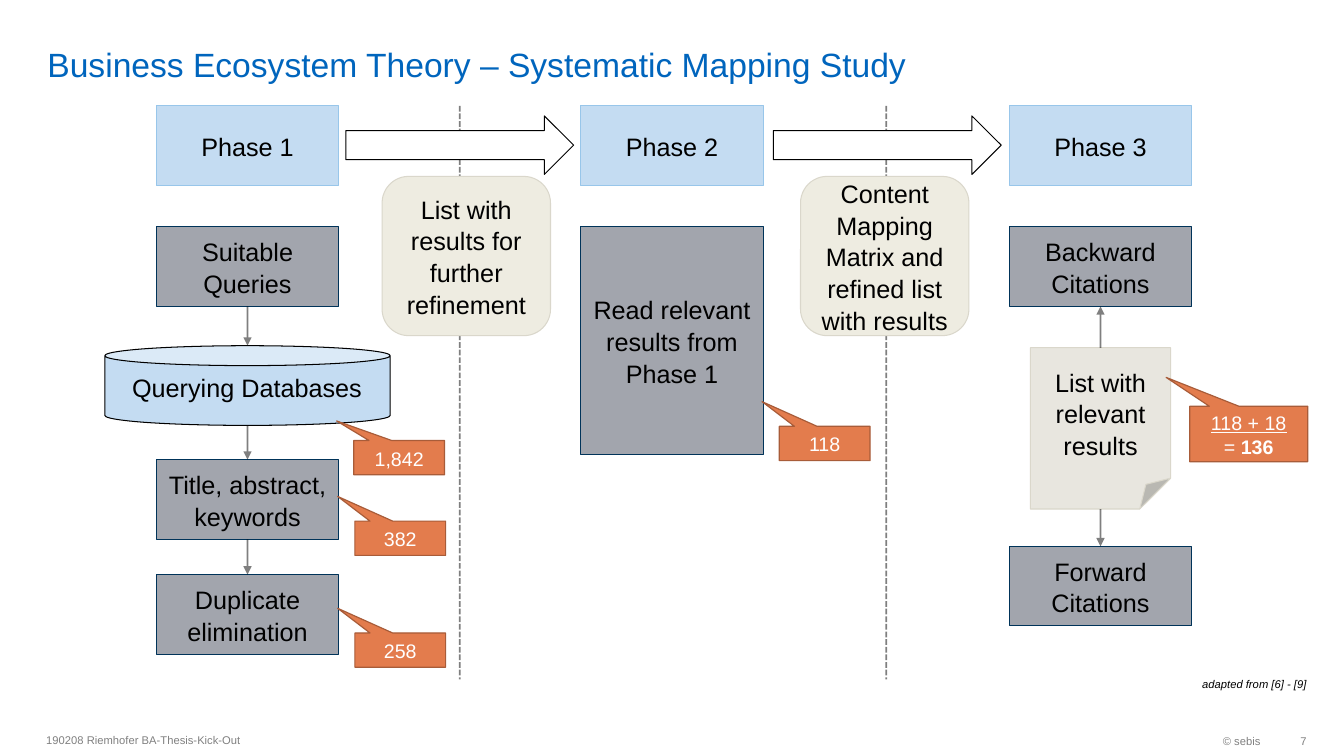
"""Builds the slide on the three phases of a systematic mapping study."""
from lxml import etree
from pptx import Presentation
from pptx.dml.color import RGBColor
from pptx.enum.dml import MSO_LINE
from pptx.enum.shapes import MSO_CONNECTOR, MSO_SHAPE
from pptx.enum.text import MSO_ANCHOR, PP_ALIGN
from pptx.oxml.ns import qn
from pptx.util import Inches, Pt

LEFT, CENTER, RIGHT = PP_ALIGN.LEFT, PP_ALIGN.CENTER, PP_ALIGN.RIGHT
TOP, MIDDLE, BOTTOM = MSO_ANCHOR.TOP, MSO_ANCHOR.MIDDLE, MSO_ANCHOR.BOTTOM
RECT, ROUNDED, CAN = MSO_SHAPE.RECTANGLE, MSO_SHAPE.ROUNDED_RECTANGLE, MSO_SHAPE.CAN
ARROW, NOTE = MSO_SHAPE.RIGHT_ARROW, MSO_SHAPE.FOLDED_CORNER
CALLOUT = MSO_SHAPE.RECTANGULAR_CALLOUT
STRAIGHT, DASHED = MSO_CONNECTOR.STRAIGHT, MSO_LINE.SQUARE_DOT

COLORS = {
    "title": "0065BD", "text": "000000", "footer": "808080", "white": "FFFFFF",
    "phase": "C4DCF2", "phase_edge": "98C6EA", "step": "A2A5AD", "step_edge": "003359",
    "result": "EEECE1", "note": "E8E6DF", "result_edge": "DAD7CB",
    "count": "E37C4D", "count_edge": "A85C39",
}

TITLE = "Business Ecosystem Theory – Systematic Mapping Study"
COLUMNS = [1.55, 5.76, 10.01]
PHASES = ["Phase 1", "Phase 2", "Phase 3"]
BOX_WIDTH, BOX_HEIGHT, PHASE_TOP, STEP_TOP = 1.81, 0.79, 1.05, 2.25
STEPS = [
    ("Suitable Queries", 0, STEP_TOP, BOX_HEIGHT),
    ("Title, abstract, keywords", 0, 4.56, BOX_HEIGHT),
    ("Duplicate elimination", 0, 5.7, BOX_HEIGHT),
    ("Read relevant results from Phase 1", 1, STEP_TOP, 2.26),
    ("Backward Citations", 2, STEP_TOP, BOX_HEIGHT),
    ("Forward Citations", 2, 5.42, BOX_HEIGHT),
]
DIVIDERS = [4.56, 8.79]
PHASE_ARROWS = [3.43, 7.67]
FLOWS = [(0, 3.04, 3.43), (0, 4.22, 4.56), (0, 5.35, 5.7), (2, 3.45, 3.04), (2, 5.05, 5.42)]
RESULTS = [
    ("List with results for further refinement", 3.79),
    ("Content Mapping Matrix and refined list with results", 7.94),
]
COUNTS = [
    ([[("1,842", {})]], (3.51, 4.37, 0.9, 0.34), (-0.69, -1.07)),
    ([[("382", {})]], (3.52, 5.17, 0.9, 0.34), (-0.69, -1.22)),
    ([[("258", {})]], (3.52, 6.28, 0.9, 0.34), (-0.69, -1.22)),
    ([[("118", {})]], (7.73, 4.23, 0.9, 0.34), (-0.69, -1.22)),
    ([[("118 + 18", {"underline": True})], [("= ", {}), ("136", {"bold": True})]],
     (11.8, 4.03, 1.17, 0.55), (-0.7, -1.02)),
]
SMALL_PRINT = [
    ("adapted from [6] - [9]", (0.36, 6.66, 12.6, 0.24), RIGHT, 0,
     {"color": "text", "italic": True, "anchor": TOP}),
    ("190208 Riemhofer BA-Thesis-Kick-Out", (0.36, 7.18, 6.3, 0.32), LEFT, 0.1, {"color": "footer"}),
    ("© sebis", (10.26, 7.19, 2.34, 0.32), RIGHT, 0.1, {"color": "footer"}),
    ("7", (12.6, 7.19, 0.36, 0.32), RIGHT, 0, {"color": "footer"}),
]


def rgb(name):
    return RGBColor.from_string(COLORS[name])


def write(frame, content, size=18, color="text", align=CENTER, anchor=MIDDLE,
          margins=(0.1, 0.05, 0.1, 0.05), spacing=1.05, italic=None):
    """Fills a text frame with a string or with paragraphs made of (text, style) runs."""
    frame.word_wrap = True
    frame.vertical_anchor = anchor
    frame.margin_left, frame.margin_top, frame.margin_right, frame.margin_bottom = map(Inches, margins)
    paragraphs = [[(content, {})]] if isinstance(content, str) else content
    for index, runs in enumerate(paragraphs):
        paragraph = frame.add_paragraph() if index else frame.paragraphs[0]
        paragraph.alignment, paragraph.line_spacing = align, spacing
        for text, style in runs:
            run = paragraph.add_run()
            run.text = text
            run.font.name, run.font.size = "Arial", Pt(size)
            run.font.color.rgb = rgb(color)
            run.font.italic = italic
            run.font.bold = style.get("bold")
            run.font.underline = style.get("underline")


def add_box(slide, kind, place, fill, edge, content=None, guides=None, edge_width=0.75, **text_format):
    box = slide.shapes.add_shape(kind, *map(Inches, place))
    box.shadow.inherit = False
    box.fill.solid()
    box.fill.fore_color.rgb = rgb(fill)
    box.line.color.rgb = rgb(edge)
    box.line.width = Pt(edge_width)
    if guides:
        guide_list = box._element.spPr.find(".//" + qn("a:avLst"))
        for guide in list(guide_list):
            guide_list.remove(guide)
        for name, value in guides.items():
            etree.SubElement(guide_list, qn("a:gd"), name=name, fmla=f"val {round(value * 100000)}")
    if content:
        write(box.text_frame, content, **text_format)


def add_line(slide, start, end, dash=None, arrow=False):
    line = slide.shapes.add_connector(STRAIGHT, *map(Inches, start + end))
    line.line.width = Pt(1.35)
    line.line.color.rgb = rgb("text")
    properties = line._element.spPr
    etree.SubElement(properties.find(".//" + qn("a:srgbClr")), qn("a:alpha"), val="50000")
    if dash:
        line.line.dash_style = dash
    if arrow:
        etree.SubElement(properties.find(qn("a:ln")), qn("a:tailEnd"), type="triangle")
    etree.SubElement(properties, qn("a:effectLst"))


def add_text(slide, content, place, **text_format):
    write(slide.shapes.add_textbox(*map(Inches, place)).text_frame, content, **text_format)


def main():
    deck = Presentation()
    deck.slide_width, deck.slide_height = Inches(13.33), Inches(7.5)
    slide = deck.slides.add_slide(deck.slide_layouts[5])

    title = slide.shapes.title
    title.left, title.top, title.width, title.height = map(Inches, (0.37, 0.05, 11.58, 0.79))
    write(title.text_frame, TITLE, size=24, color="title", align=LEFT, anchor=BOTTOM,
          margins=(0.1, 0, 0.1, 0), spacing=1)

    for x in DIVIDERS:
        add_line(slide, (x, 1.05), (x, 6.74), dash=DASHED)
    for x, phase in zip(COLUMNS, PHASES):
        add_box(slide, RECT, (x, PHASE_TOP, BOX_WIDTH, BOX_HEIGHT), "phase", "phase_edge", phase)
    for x in PHASE_ARROWS:
        add_box(slide, ARROW, (x, 1.15, 2.26, 0.58), "white", "text")

    add_box(slide, CAN, (1.04, 3.43, 2.83, BOX_HEIGHT), "phase", "text")
    add_text(slide, "Querying Databases", (1.19, 3.64, 2.52, 0.4))
    for step, column, top, height in STEPS:
        add_box(slide, RECT, (COLUMNS[column], top, BOX_WIDTH, height), "step", "step_edge", step)
    add_box(slide, NOTE, (10.22, 3.45, 1.39, 1.6), "note", "result_edge",
            "List with relevant results", guides={"adj": 0.22})
    for column, start, end in FLOWS:
        x = COLUMNS[column] + BOX_WIDTH / 2
        add_line(slide, (x, start), (x, end), arrow=True)

    for result, x in RESULTS:
        add_box(slide, ROUNDED, (x, 1.75, 1.67, 1.58), "result", "result_edge", result)
    for count, place, (across, down) in COUNTS:
        add_box(slide, CALLOUT, place, "count", "count_edge", count,
                guides={"adj1": across, "adj2": down}, edge_width=0.85, size=14, color="white")
    for text, place, align, right, text_format in SMALL_PRINT:
        add_text(slide, text, place, size=8, align=align, margins=(0.1, 0.05, right, 0.05), **text_format)

    deck.save("out.pptx")


if __name__ == "__main__":
    main()
